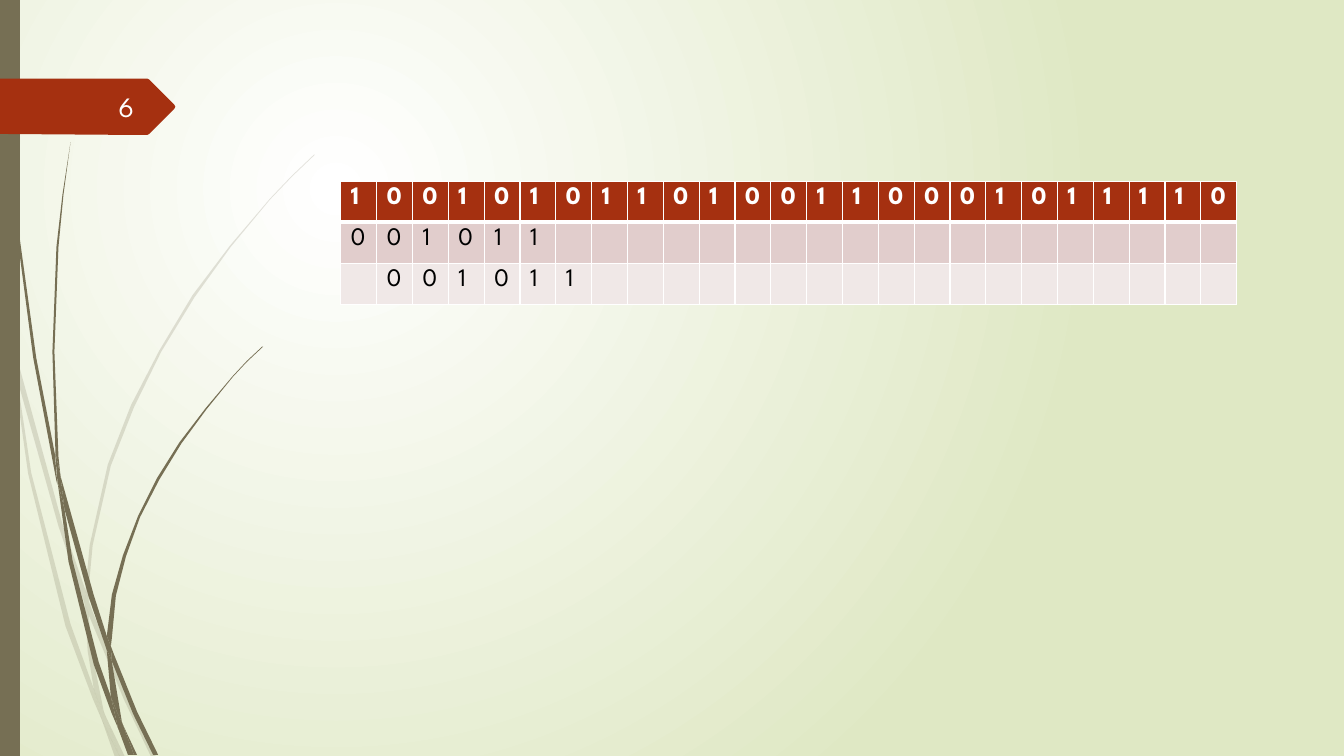
from lxml.etree import SubElement
from pptx import Presentation
from pptx.dml.color import RGBColor
from pptx.enum.shapes import MSO_SHAPE as Shape
from pptx.enum.text import MSO_ANCHOR as Anchor, PP_ALIGN as Align
from pptx.oxml.ns import qn
from pptx.util import Cm, Pt

WHITE = RGBColor(0xFF, 0xFF, 0xFF)
BLACK = RGBColor(0x00, 0x00, 0x00)
NEAR_WHITE = RGBColor(0xFE, 0xFF, 0xFF)
PALE_GREEN = RGBColor(0xDF, 0xE8, 0xC4)
OLIVE = RGBColor(0x76, 0x6F, 0x54)
RUST = RGBColor(0xA5, 0x30, 0x10)
ROSE = RGBColor(0xE1, 0xCD, 0xCC)
PALE_ROSE = RGBColor(0xF0, 0xE8, 0xE7)
FONT = "League Spartan"
OUTLINE_UNIT = Cm(2.54) / 100

BIT_ROWS = [
    ("1001010110100110001011110", RUST, {"color": WHITE, "bold": True}, 3),
    ("001011", ROSE, {"color": BLACK, "bold": False}, 1),
    (" 001011", PALE_ROSE, {"color": BLACK, "bold": False}, 1),
]

FAINT_BLADES = [
    [(11, 350), (9, 322), (0, 282), (0, 299), (10, 344)],
    [(58, 522), (84, 599), (85, 586), (62, 520), (14, 345), (17, 376)],
    [(92, 607), (88, 596), (88, 610), (123, 694), (150, 751), (155, 751),
     (127, 692)],
    [(119, 751), (124, 751), (105, 711)],
    [(93, 683), (70, 619), (31, 469), (17, 376), (11, 350), (28, 470),
     (65, 621), (92, 693), (101, 714), (99, 707)],
    [(84, 599), (87, 646), (93, 683), (96, 692), (105, 711), (103, 706),
     (91, 646), (88, 610), (88, 608)],
    [(88, 584), (92, 541), (110, 462), (133, 404), (160, 349), (193, 295),
     (229, 245), (268, 198), (290, 175), (312, 154), (312, 153), (289, 175),
     (268, 197), (228, 244), (191, 293), (158, 348), (130, 402), (107, 461),
     (89, 541), (85, 584), (85, 586), (88, 596)],
    [(101, 714), (114, 751), (119, 751)],
    [(88, 608), (88, 610), (88, 596), (85, 586), (84, 599)],
    [(96, 692), (93, 683), (99, 707), (101, 714), (119, 751), (105, 711)],
]

SOLID_BLADES = [
    [(7, 110), (17, 233), (33, 355), (56, 477), (57, 481), (55, 457),
     (55, 453), (36, 355), (19, 232), (8, 109), (5, 48), (4, 0), (3, 0),
     (4, 48)],
    [(88, 592), (106, 645), (106, 633), (106, 631), (93, 590), (60, 472),
     (64, 505)],
    [(113, 649), (110, 641), (111, 656), (132, 708), (152, 749), (157, 749),
     (136, 706)],
    [(110, 691), (98, 657), (72, 556), (64, 505), (57, 477), (68, 557),
     (93, 659), (111, 708), (117, 722), (116, 717)],
    [(60, 472), (58, 453), (54, 349), (58, 245), (63, 193), (70, 141),
     (62, 193), (56, 245), (52, 349), (55, 449)],
    [(133, 749), (136, 749), (122, 719)],
    [(57, 477), (64, 505), (60, 472), (55, 449), (55, 453)],
    [(111, 633), (115, 591), (125, 552), (139, 513), (158, 476), (180, 440),
     (205, 406), (231, 374), (245, 359), (261, 344), (260, 344), (245, 358),
     (231, 373), (204, 405), (178, 439), (156, 474), (137, 512), (122, 551),
     (111, 590), (106, 631), (110, 641)],
    [(117, 722), (127, 749), (131, 749)],
    [(106, 645), (110, 691), (116, 706), (122, 719), (121, 716), (111, 656),
     (109, 651)],
    [(106, 645), (109, 651), (111, 656), (110, 641), (106, 631), (106, 633)],
    [(116, 706), (110, 691), (116, 717), (117, 722), (130, 749), (133, 749),
     (122, 719)],
]

TAG_OUTLINE = [(173, 30), (148, 55), (146, 56), (136, 56), (0, 55), (0, 0),
               (146, 0), (148, 1), (173, 26), (174, 28)]


def paint(shape, color, opacity=100):
    shape.shadow.inherit = False
    shape.fill.solid()
    shape.fill.fore_color.rgb = color
    shape.line.fill.background()
    if opacity < 100:
        tint = shape.fill._xPr.find(qn("a:solidFill"))[0]
        SubElement(tint, qn("a:alpha"), val=str(opacity * 1000))


def format_run(run, size, color, bold=False):
    run.font.color.rgb = color
    for key, value in {"name": FONT, "size": Pt(size), "bold": bold}.items():
        setattr(run.font, key, value)


def add_outline(shapes, points, left, top, color, opacity=100):
    builder = shapes.build_freeform(*points[0], scale=OUTLINE_UNIT)
    builder.add_line_segments(points[1:], close=True)
    paint(builder.convert_to_shape(left, top), color, opacity)


def add_background(slide):
    fill = slide.background.fill
    fill.gradient()
    for stop, color in zip(fill.gradient_stops, (WHITE, PALE_GREEN)):
        stop.color.rgb = color
    gradient = slide.element.find(".//" + qn("a:gradFill"))
    gradient.remove(gradient.find(qn("a:lin")))
    glow = SubElement(gradient, qn("a:path"), {"path": "circle"})
    SubElement(glow, qn("a:fillToRect"),
               l="50000", t="50000", r="100000", b="100000")


def add_grass(slide, left, top, blades, opacity):
    grass = slide.shapes.add_group_shape()
    for blade in blades:
        add_outline(grass.shapes, blade, left, top, OLIVE, opacity)


def add_side_bar(slide, left, top, width, height):
    bar = slide.shapes.add_shape(Shape.RECTANGLE, left, top, width, height)
    paint(bar, OLIVE)


def add_page_tag(slide, left, top):
    add_outline(slide.shapes, TAG_OUTLINE, left, top, RUST)
    number = slide.shapes.add_textbox(left + Cm(1.47), top + Cm(0.2),
                                      Cm(2.16), Cm(1.02))
    frame = number.text_frame
    for key, value in {"word_wrap": True,
                       "vertical_anchor": Anchor.MIDDLE}.items():
        setattr(frame, key, value)
    paragraph = frame.paragraphs[0]
    paragraph.alignment = Align.RIGHT
    run = paragraph.add_run()
    run.text = "6"
    format_run(run, 20, NEAR_WHITE)


def add_border(cell, side, points):
    line = SubElement(cell._tc.get_or_add_tcPr(), qn("a:" + side),
                      w=str(Pt(points)))
    ink = SubElement(line, qn("a:solidFill"))
    SubElement(ink, qn("a:srgbClr"), val=str(WHITE))


def add_bit_table(slide, left, top, width, height):
    column_count = len(BIT_ROWS[0][0])
    table = slide.shapes.add_table(len(BIT_ROWS), column_count,
                                   left, top, width, height).table
    table.horz_banding = False
    for column in table.columns:
        column.width = width // column_count
    top_border = 1
    for row, (bits, fill, style, bottom_border) in zip(table.rows, BIT_ROWS):
        row.height = height // len(BIT_ROWS)
        for cell, bit in zip(row.cells, bits.ljust(column_count)):
            borders = {"lnL": 1, "lnR": 1, "lnT": top_border,
                       "lnB": bottom_border}
            for side, points in borders.items():
                add_border(cell, side, points)
            cell.fill.solid()
            cell.fill.fore_color.rgb = fill
            if bit.strip():
                run = cell.text_frame.paragraphs[0].add_run()
                run.text = bit
                format_run(run, 18, **style)
        top_border = bottom_border


def main():
    deck = Presentation()
    deck.slide_width, deck.slide_height = Cm(33.87), Cm(19.05)
    slide = deck.slides.add_slide(deck.slide_layouts[6])
    add_background(slide)
    add_grass(slide, 0, 0, FAINT_BLADES, 20)
    add_grass(slide, 0, 0, SOLID_BLADES, 100)
    add_side_bar(slide, 0, 0, Cm(0.5), deck.slide_height)
    add_page_tag(slide, 0, Cm(1.98))
    add_bit_table(slide, Cm(8.59), Cm(4.57), Cm(22.58), Cm(3.1))
    deck.save("out.pptx")


if __name__ == "__main__":
    main()
